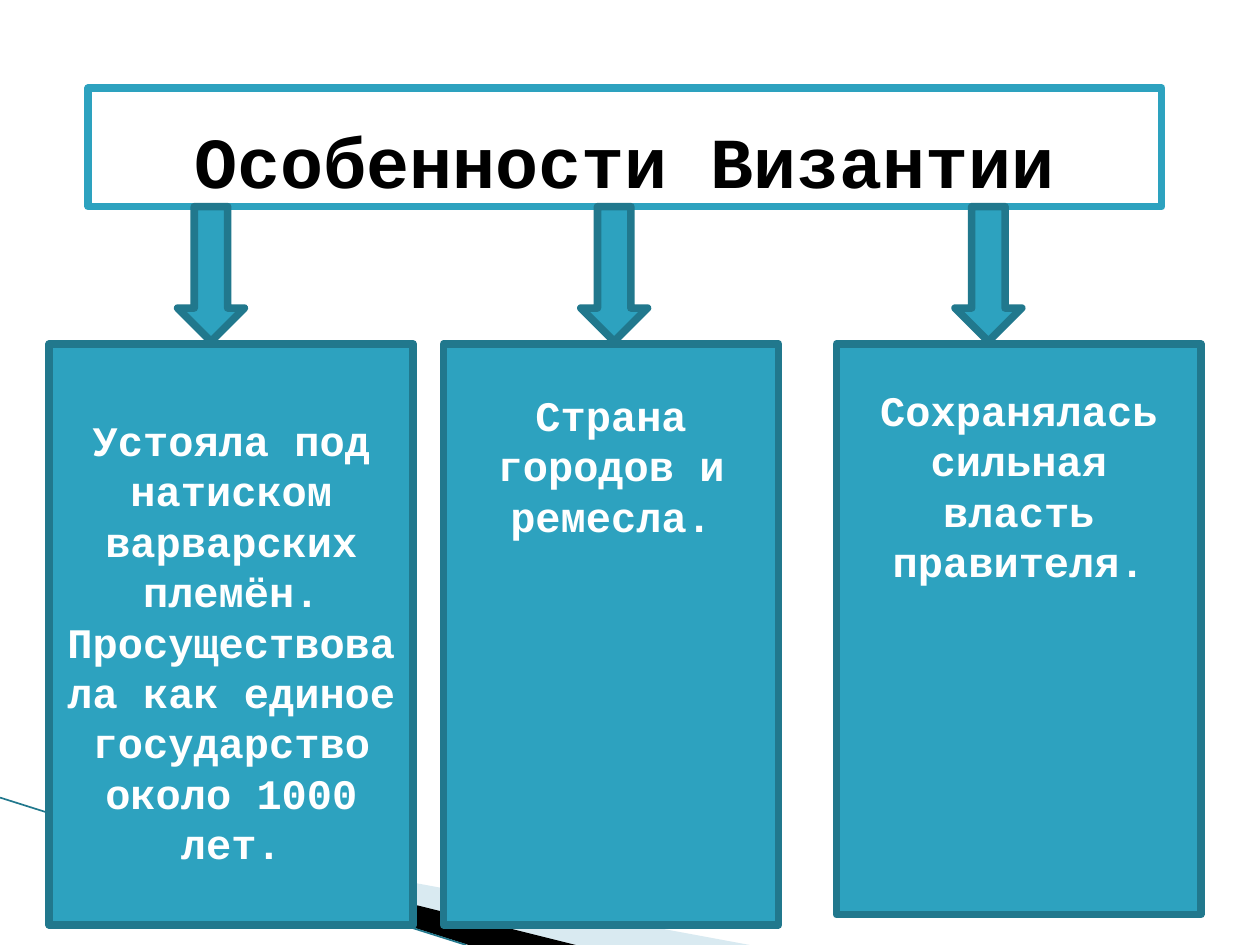
import pptx
import pptx.util
import pptx.dml.color
import pptx.enum.shapes
import pptx.enum.text
import pptx.oxml.ns
import lxml.etree

Inches = pptx.util.Inches
Pt = pptx.util.Pt
SHAPES = pptx.enum.shapes.MSO_SHAPE
ANCHORS = pptx.enum.text.MSO_ANCHOR

THEME = {
    "font": "Courier New",
    "title_size": 41,
    "body_size": 24,
    "body_leading": 28.8,
    "line_width": 4.33,
    "thin_width": 0.95,
    "accent": "2DA2BF",
    "accent_dark": "21788D",
    "pale": "A0CBDC",
    "black": "000000",
    "white": "FFFFFF",
}

# Decorative corner: points, fill colour, opacity in percent
CORNER_BANDS = [
    ([(0.55, 6.5), (5.95, 7.5), (4.56, 7.5)], "pale", 40),
    ([(0.53, 6.49), (4.57, 7.5), (3.72, 7.5)], "black", 100),
]
CORNER_LINE = (0, 6.33, 3.7, 7.5)

TITLE = "Особенности Византии"
TITLE_BOX = (0.7, 0.7, 8.52, 0.94)

ARROW_LEFTS = [1.41, 4.61, 7.58]
ARROW_TOP, ARROW_WIDTH, ARROW_HEIGHT = 1.64, 0.53, 1.07

# Feature boxes share one top edge
FEATURE_TOP = 2.73
FEATURES = [
    {"text": "Устояла под натиском варварских племён. Просуществовала "
             "как единое государство около 1000 лет.",
     "left": 0.39, "width": 2.89, "height": 4.61,
     "anchor": ANCHORS.MIDDLE, "margin_top": 0.16},
    {"text": "Страна городов и ремесла.",
     "left": 3.52, "width": 2.66, "height": 4.61,
     "anchor": ANCHORS.TOP, "margin_top": 0.36},
    {"text": "Сохранялась сильная власть правителя.",
     "left": 6.64, "width": 2.89, "height": 4.53,
     "anchor": ANCHORS.TOP, "margin_top": 0.32},
]


def color(name):
    return pptx.dml.color.RGBColor.from_string(THEME[name])


def set_attributes(target, values):
    for name, value in values.items():
        setattr(target, name, value)


def fill_solid(shape, fill):
    shape.shadow.inherit = False
    shape.fill.solid()
    shape.fill.fore_color.rgb = color(fill)


def add_band(slide, points, fill, opacity):
    corners = [(Inches(x), Inches(y)) for x, y in points]
    builder = slide.shapes.build_freeform(*corners[0])
    builder.add_line_segments(corners[1:], close=True)
    band = builder.convert_to_shape()
    fill_solid(band, fill)
    band.line.fill.background()
    if opacity < 100:
        qualified = pptx.oxml.ns.qn
        solid_color = band.fill._xPr.find(qualified("a:solidFill"))[0]
        alpha = lxml.etree.SubElement(solid_color, qualified("a:alpha"))
        alpha.set("val", str(opacity * 1000))


def add_corner_line(slide):
    line = slide.shapes.add_connector(
        pptx.enum.shapes.MSO_CONNECTOR.STRAIGHT, *map(Inches, CORNER_LINE))
    line.line.color.rgb = color("accent_dark")
    line.line.width = Pt(THEME["thin_width"])
    lxml.etree.SubElement(line._element.spPr, pptx.oxml.ns.qn("a:effectLst"))


def add_outlined(slide, kind, box, fill, outline):
    shape = slide.shapes.add_shape(kind, *map(Inches, box))
    fill_solid(shape, fill)
    shape.line.color.rgb = color(outline)
    shape.line.width = Pt(THEME["line_width"])
    return shape


def write_text(shape, text, size, font_color, frame_values, leading=None):
    frame = shape.text_frame
    set_attributes(frame, {"word_wrap": True, **frame_values})
    paragraph = frame.paragraphs[0]
    set_attributes(paragraph, {
        "text": text,
        "alignment": pptx.enum.text.PP_ALIGN.CENTER,
        "line_spacing": leading,
    })
    font = paragraph.runs[0].font
    set_attributes(font, {"name": THEME["font"], "size": Pt(size), "bold": True})
    font.color.rgb = color(font_color)


def main():
    presentation = pptx.Presentation()
    set_attributes(presentation, {
        "slide_width": Inches(10), "slide_height": Inches(7.5)})
    slide = presentation.slides.add_slide(presentation.slide_layouts[6])

    for points, fill, opacity in CORNER_BANDS:
        add_band(slide, points, fill, opacity)
    add_corner_line(slide)

    title = add_outlined(slide, SHAPES.RECTANGLE, TITLE_BOX, "white", "accent")
    write_text(title, TITLE, THEME["title_size"], "black", {
        "vertical_anchor": ANCHORS.MIDDLE,
        "margin_top": Inches(0.2), "margin_bottom": 0})

    for left in ARROW_LEFTS:
        box = (left, ARROW_TOP, ARROW_WIDTH, ARROW_HEIGHT)
        add_outlined(slide, SHAPES.DOWN_ARROW, box, "accent", "accent_dark")

    for feature in FEATURES:
        box = (feature["left"], FEATURE_TOP, feature["width"], feature["height"])
        shape = add_outlined(slide, SHAPES.RECTANGLE, box, "accent", "accent_dark")
        write_text(shape, feature["text"], THEME["body_size"], "white", {
            "vertical_anchor": feature["anchor"],
            "margin_top": Inches(feature["margin_top"]),
        }, Pt(THEME["body_leading"]))

    presentation.save("out.pptx")


if __name__ == "__main__":
    main()
